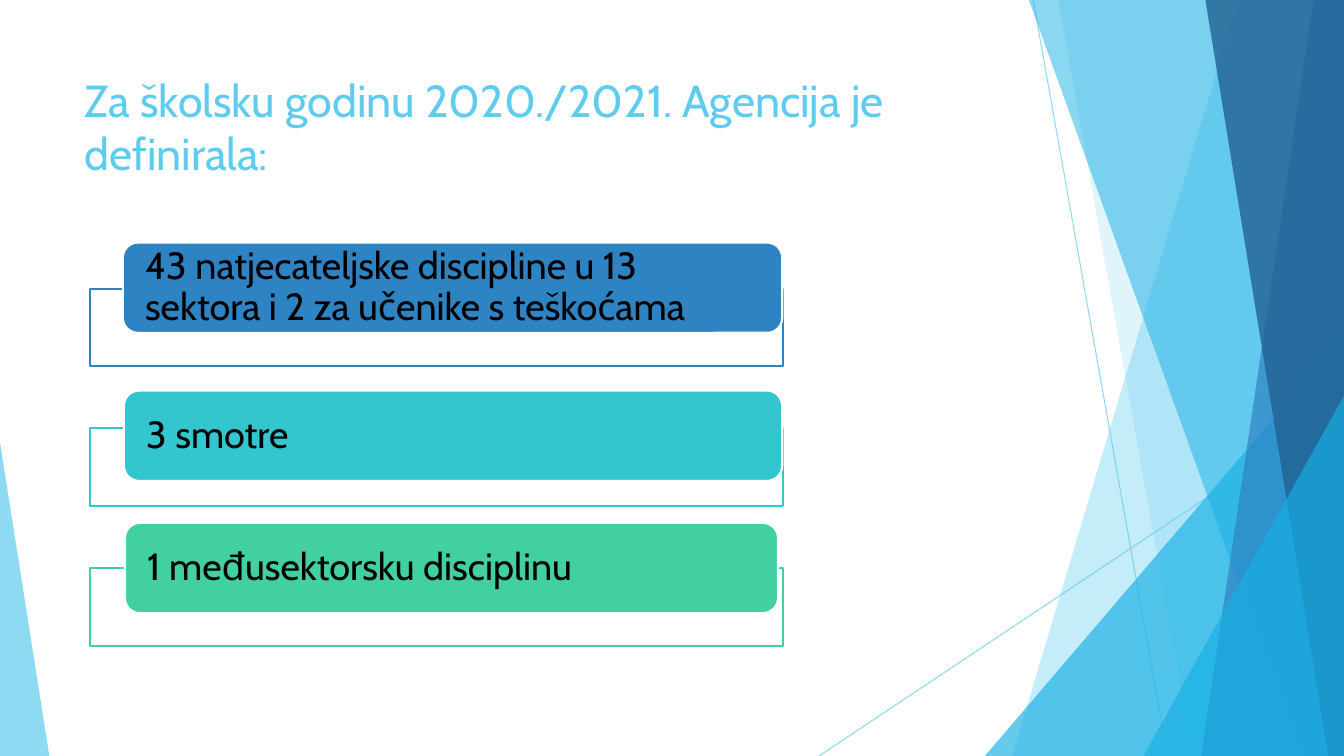
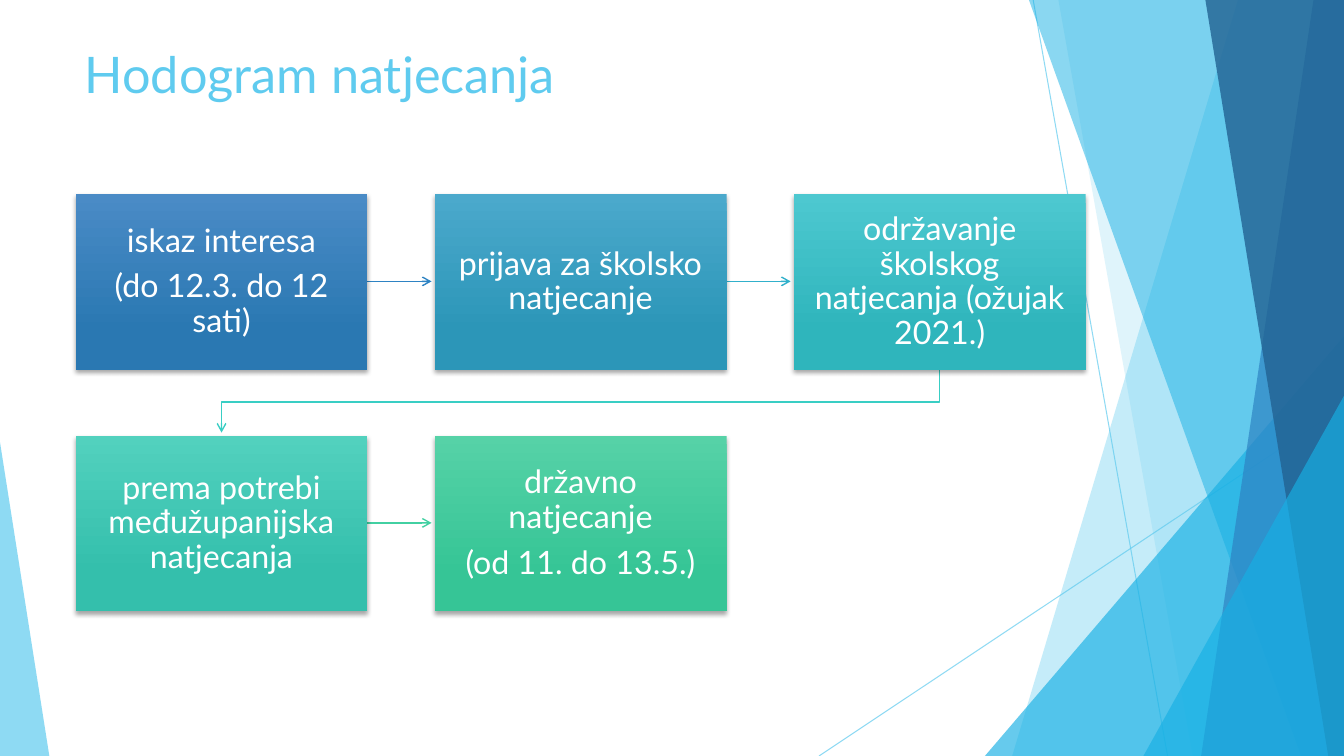
from dataclasses import dataclass

import lxml.etree
import pptx
import pptx.dml.color
import pptx.enum.shapes
import pptx.enum.text
import pptx.oxml.ns
import pptx.shapes.autoshape
import pptx.shapes.base
import pptx.shapes.connector
import pptx.slide
import pptx.util

PX = 9525
WIDTH, HEIGHT = 1280, 720
COLORS = {
    "sky": "5FCBEF", "cyan": "17B0E4", "blue": "2E83C3", "navy": "226292",
    "turquoise": "34C6CE", "green": "42D0A2", "teal": "39CEC4", "lake": "31B0CB",
    "white": "FFFFFF", "black": "000000",
    "blue_top": "4A8BC6", "blue_base": "2A78B2",
    "lake_top": "4BA9CC", "lake_base": "2C96B8",
    "turquoise_top": "4DC8D0", "turquoise_base": "2FB5BC",
    "teal_top": "52D1BE", "teal_base": "34BFAC",
    "green_top": "56D2A7", "green_base": "36C596",
}
AUTO = pptx.enum.shapes.MSO_SHAPE
ALIGN = pptx.enum.text.PP_ALIGN
ANCHOR = pptx.enum.text.MSO_ANCHOR


@dataclass(frozen=True)
class Panel:
    """Full-height area from a slanted left edge to the right slide edge."""
    top_x: int
    bottom_x: int
    color: str
    alpha: int


@dataclass(frozen=True)
class Wedge:
    x: int
    y: int
    w: int
    h: int
    peak: int
    color: str
    alpha: int


@dataclass(frozen=True)
class ListRow:
    text: str
    color: str
    x: int
    y: int
    w: int


@dataclass(frozen=True)
class Step:
    lines: tuple[str, ...]
    color: str


RAYS = [(984, 0, 1112, HEIGHT), (WIDTH, 387, 780, HEIGHT)]
DECOR = [
    Panel(1179, 964, "sky", 36),
    Panel(1008, 1136, "sky", 20),
    Wedge(938, 320, 342, 400, 1, "cyan", 66),
    Panel(980, 1239, "cyan", 50),
    Panel(1251, 1144, "blue", 70),
    Panel(1148, 1265, "navy", 80),
    Wedge(1089, 377, 191, 343, 1, "cyan", 66),
    Wedge(0, 421, 47, 299, 0, "sky", 70),
]
ROWS = [
    ListRow("43 natjecateljske discipline u 13 sektora i 2 za učenike s teškoćama",
            "blue", 117, 231, 628),
    ListRow("3 smotre", "turquoise", 118, 372, 627),
    ListRow("1 međusektorsku disciplinu", "green", 119, 498, 622),
]
STEPS = [
    Step(("iskaz interesa", "(do 12.3. do 12 sati)"), "blue"),
    Step(("prijava za školsko natjecanje",), "lake"),
    Step(("održavanje školskog natjecanja (ožujak 2021.)",), "turquoise"),
    Step(("prema potrebi međužupanijska natjecanja",), "teal"),
    Step(("državno natjecanje", "(od 11. do 13.5.)"), "green"),
]
ARROW_COLORS = ["blue", "lake", "teal", "green"]
COLUMNS = 3
STEP_X, STEP_Y, STEP_W, STEP_H = 72, 185, 278, 167
PITCH_X, PITCH_Y = 342, 230
ARROW_GAP = 3


def rgb(name: str) -> pptx.dml.color.RGBColor:
    return pptx.dml.color.RGBColor.from_string(COLORS[name])


def add_xml(parent: lxml.etree._Element, tag: str, **attrs: str) -> lxml.etree._Element:
    return lxml.etree.SubElement(parent, pptx.oxml.ns.qn(tag), attrs)


def set_alpha(sp: pptx.shapes.base.BaseShape, percent: int) -> None:
    """Make every colour set so far on the shape partly transparent."""
    for color in sp.element.spPr.iter(pptx.oxml.ns.qn("a:srgbClr")):
        add_xml(color, "a:alpha", val=str(percent * 1000))


def set_fill(sp: pptx.shapes.autoshape.Shape, color: str, alpha: int = 100) -> None:
    sp.shadow.inherit = False
    sp.fill.solid()
    sp.fill.fore_color.rgb = rgb(color)
    if alpha < 100:
        set_alpha(sp, alpha)
    sp.line.fill.background()


def set_line(sp: pptx.shapes.base.BaseShape, color: str, width: float) -> None:
    sp.line.color.rgb = rgb(color)
    sp.line.width = pptx.util.Pt(width)


def add_box(slide: pptx.slide.Slide, kind: pptx.enum.shapes.MSO_SHAPE,
            x: int, y: int, w: int, h: int) -> pptx.shapes.autoshape.Shape:
    return slide.shapes.add_shape(kind, x * PX, y * PX, w * PX, h * PX)


def add_line(slide: pptx.slide.Slide, x1: int, y1: int, x2: int, y2: int,
             color: str, width: float) -> pptx.shapes.connector.Connector:
    line = slide.shapes.add_connector(pptx.enum.shapes.MSO_CONNECTOR.STRAIGHT,
                                      x1 * PX, y1 * PX, x2 * PX, y2 * PX)
    set_line(line, color, width)
    add_xml(line.element.spPr, "a:effectLst")
    return line


def add_outline(slide: pptx.slide.Slide, points: list[tuple[int, int]],
                close: bool) -> pptx.shapes.autoshape.Shape:
    builder = slide.shapes.build_freeform(*points[0], scale=PX)
    builder.add_line_segments(points[1:], close=close)
    return builder.convert_to_shape()


def add_arrowhead(sp: pptx.shapes.base.BaseShape) -> None:
    add_xml(sp.line._get_or_add_ln(), "a:tailEnd", type="arrow")


def set_text(sp: pptx.shapes.base.BaseShape, lines: tuple[str, ...], font: str,
             size: int, color: str, align: pptx.enum.text.PP_ALIGN,
             anchor: pptx.enum.text.MSO_ANCHOR) -> None:
    tf = sp.text_frame
    tf.text = "\n".join(lines)
    tf.word_wrap = True
    tf.auto_size = pptx.enum.text.MSO_AUTO_SIZE.NONE
    tf.vertical_anchor = anchor
    for p in tf.paragraphs:
        p.alignment = align
        for r in p.runs:
            r.font.name = font
            r.font.size = pptx.util.Pt(size)
            r.font.color.rgb = rgb(color)


def set_body_spacing(sp: pptx.shapes.autoshape.Shape, side: int, vertical: int) -> None:
    tf = sp.text_frame
    tf.margin_left = tf.margin_right = side * PX
    tf.margin_top = tf.margin_bottom = vertical * PX
    for i, p in enumerate(tf.paragraphs):
        p.line_spacing = 0.9
        p.space_before = pptx.util.Pt(8 if i else 0)


def add_title(slide: pptx.slide.Slide, text: str, y: int, font: str, size: int) -> None:
    title = slide.shapes.title
    title.left, title.top, title.width, title.height = (
        v * PX for v in (71, y, 902, 138))
    set_text(title, (text,), font, size, "sky", ALIGN.LEFT, ANCHOR.TOP)


def add_decor(slide: pptx.slide.Slide, master: pptx.slide.SlideMaster) -> None:
    """Draw the shared bands on the slide, then move them to its master."""
    shapes = []
    for ray in RAYS:
        line = add_line(slide, *ray, "sky", 0.75)
        set_alpha(line, 70)
        shapes.append(line)
    for part in DECOR:
        if isinstance(part, Panel):
            sp = add_outline(slide, [(part.top_x, 0), (WIDTH, 0), (WIDTH, HEIGHT),
                                     (part.bottom_x, HEIGHT)], True)
        else:
            sp = add_box(slide, AUTO.ISOSCELES_TRIANGLE, part.x, part.y, part.w, part.h)
            sp.adjustments[0] = part.peak
        set_fill(sp, part.color, part.alpha)
        shapes.append(sp)
    for i, sp in enumerate(shapes):
        sp.element.xpath(".//p:cNvPr")[0].set("id", str(100 + i))
        master.shapes.element.insert(2 + i, sp.element)


def add_list_row(slide: pptx.slide.Slide, row: ListRow, index: int) -> None:
    frame = add_box(slide, AUTO.RECTANGLE, 86, 275 + 133 * index, 660, 74)
    set_fill(frame, "white", 90)
    set_line(frame, row.color, 1.5)
    tab = add_box(slide, AUTO.ROUNDED_RECTANGLE, row.x, row.y, row.w, 86)
    set_fill(tab, row.color)
    set_line(tab, "white", 1.5)
    set_text(tab, (row.text,), "Cabin", 27, "black", ALIGN.LEFT, ANCHOR.MIDDLE)
    set_body_spacing(tab, 17, 0)


def step_origin(index: int) -> tuple[int, int]:
    row, column = divmod(index, COLUMNS)
    return STEP_X + column * PITCH_X, STEP_Y + row * PITCH_Y


def add_step(slide: pptx.slide.Slide, step: Step, index: int) -> None:
    sp = add_box(slide, AUTO.RECTANGLE, *step_origin(index), STEP_W, STEP_H)
    sp.shadow.inherit = False
    sp.fill.gradient()
    sp.fill.gradient_angle = 270
    for stop, shade, position in zip(sp.fill.gradient_stops, ("top", "base"), (0, 0.78)):
        stop.color.rgb = rgb(f"{step.color}_{shade}")
        stop.position = position
    sp.line.fill.background()
    effects = sp.element.spPr.find(pptx.oxml.ns.qn("a:effectLst"))
    shadow = add_xml(effects, "a:outerShdw", blurRad=str(pptx.util.Pt(3)),
                     dist=str(pptx.util.Pt(2)), dir="5400000", rotWithShape="0")
    color = add_xml(shadow, "a:srgbClr", val=COLORS["black"])
    add_xml(color, "a:alpha", val="35000")
    set_text(sp, step.lines, "Lato", 23, "white", ALIGN.CENTER, ANCHOR.MIDDLE)
    set_body_spacing(sp, 17, 17)


def add_step_arrow(slide: pptx.slide.Slide, index: int, color: str) -> None:
    """Link a step to the next one, bending where the row ends."""
    (x1, y1), (x2, y2) = step_origin(index), step_origin(index + 1)
    if y1 == y2:
        middle = y1 + STEP_H // 2
        arrow = add_line(slide, x1 + STEP_W, middle, x2 - ARROW_GAP, middle, color, 1)
    else:
        start, end = x1 + STEP_W // 2, x2 + STEP_W // 2
        bottom = y1 + STEP_H
        bend = (bottom + y2) // 2
        arrow = add_outline(slide, [(start, bottom), (start, bend), (end, bend),
                                    (end, y2 - ARROW_GAP)], False)
        arrow.shadow.inherit = False
        arrow.fill.background()
        set_line(arrow, color, 1)
    add_arrowhead(arrow)


def main() -> None:
    prs = pptx.Presentation()
    prs.slide_width, prs.slide_height = WIDTH * PX, HEIGHT * PX
    layout = prs.slide_layouts.get_by_name("Title Only")

    disciplines = prs.slides.add_slide(layout)
    add_decor(disciplines, prs.slide_master)
    add_title(disciplines, "Za školsku godinu 2020./2021. Agencija je definirala:",
              64, "Cabin", 32)
    for i, row in enumerate(ROWS):
        add_list_row(disciplines, row, i)

    schedule = prs.slides.add_slide(layout)
    add_title(schedule, "Hodogram natjecanja", 36, "Lato", 36)
    for i, color in enumerate(ARROW_COLORS):
        add_step_arrow(schedule, i, color)
    for i, step in enumerate(STEPS):
        add_step(schedule, step, i)

    prs.save("out.pptx")


if __name__ == "__main__":
    main()
